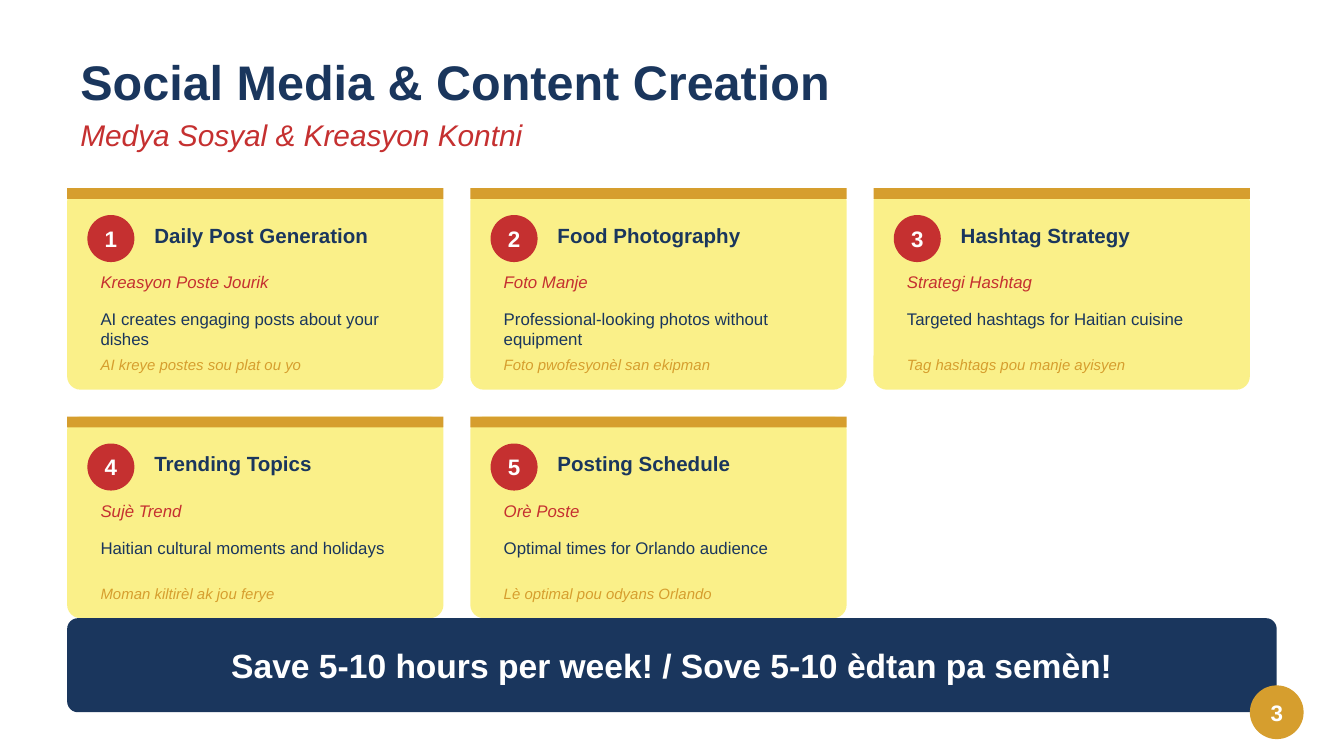
from pptx import Presentation
from pptx.dml.color import RGBColor
from pptx.enum.shapes import MSO_SHAPE as SHAPE
from pptx.enum.text import MSO_ANCHOR as ANCHOR, PP_ALIGN as ALIGN
from pptx.util import Pt

NAVY, RED, GOLD = "1A365D", "C53030", "D69E2E"
YELLOW, WHITE = "FAF089", "FFFFFF"
rgb = RGBColor.from_string

prs = Presentation()
prs.slide_width, prs.slide_height = Pt(720), Pt(405)
s = prs.slides.add_slide(prs.slide_layouts[6])


def add_text(box, text, size, color, bold=False, italic=False, anchor=ANCHOR.MIDDLE):
    sp = s.shapes.add_textbox(*map(Pt, box))
    tf = sp.text_frame
    tf.word_wrap = True
    tf.vertical_anchor = anchor
    p = tf.paragraphs[0]
    p.text = text
    p.font.name, p.font.size = "Arial", Pt(size)
    p.font.bold, p.font.italic = bold, italic
    p.font.color.rgb = rgb(color)


def add_shape(kind, box, fill, text="", size=12, radius=None):
    """Add a filled shape without outline; its text is bold, white and centred."""
    sp = s.shapes.add_shape(kind, *map(Pt, box))
    sp.shadow.inherit = False
    sp.fill.solid()
    sp.fill.fore_color.rgb = rgb(fill)
    sp.line.fill.background()
    if radius is not None:
        sp.adjustments[0] = radius / min(box[2:])
    if text:
        tf = sp.text_frame
        tf.margin_left = tf.margin_right = tf.margin_top = tf.margin_bottom = 0
        tf.vertical_anchor = ANCHOR.MIDDLE
        p = tf.paragraphs[0]
        p.text = text
        p.alignment = ALIGN.CENTER
        p.font.name, p.font.size, p.font.bold = "Arial", Pt(size), True
        p.font.color.rgb = rgb(WHITE)


# Headings
add_text((36, 21.6, 432, 43.2), "Social Media & Content Creation", 26, NAVY, bold=True)
add_text((36, 57.6, 432, 28.8), "Medya Sosyal & Kreasyon Kontni", 16, RED, italic=True)

# Cards: title, Creole title, description, Creole description
cards = [
    ("Daily Post Generation", "Kreasyon Poste Jourik",
     "AI creates engaging posts about your dishes", "AI kreye postes sou plat ou yo"),
    ("Food Photography", "Foto Manje",
     "Professional-looking photos without equipment", "Foto pwofesyonèl san ekipman"),
    ("Hashtag Strategy", "Strategi Hashtag",
     "Targeted hashtags for Haitian cuisine", "Tag hashtags pou manje ayisyen"),
    ("Trending Topics", "Sujè Trend",
     "Haitian cultural moments and holidays", "Moman kiltirèl ak jou ferye"),
    ("Posting Schedule", "Orè Poste",
     "Optimal times for Orlando audience", "Lè optimal pou odyans Orlando"),
]
CARD_W, CARD_H, GAP = 201.6, 108, 14.4

for i, (title, title_ht, desc, desc_ht) in enumerate(cards):
    row, col = divmod(i, 3)
    x = 36 + col * (CARD_W + GAP)
    y = 100.8 + row * (CARD_H + GAP)
    left = x + 10.8
    add_shape(SHAPE.ROUNDED_RECTANGLE, (x, y, CARD_W, CARD_H), YELLOW, radius=7.2)
    add_shape(SHAPE.RECTANGLE, (x, y, CARD_W, 5.76), GOLD)
    add_shape(SHAPE.OVAL, (left, y + 14.4, 25.2, 25.2), RED, str(i + 1))
    add_text((x + 39.6, y + 10.8, 151.2, 28.8), title, 11, NAVY, bold=True)
    add_text((left, y + 39.6, 180, 21.6), title_ht, 9, RED, italic=True)
    add_text((left, y + 61.2, 180, 36), desc, 9, NAVY, anchor=ANCHOR.TOP)
    add_text((left, y + 86.4, 180, 18), desc_ht, 8, GOLD, italic=True, anchor=ANCHOR.TOP)

# Banner and page number
add_shape(SHAPE.ROUNDED_RECTANGLE, (36, 331.2, 648, 50.4), NAVY,
          "Save 5-10 hours per week! / Sove 5-10 èdtan pa semèn!", 18, radius=5.76)
add_shape(SHAPE.OVAL, (669.6, 367.2, 28.8, 28.8), GOLD, "3")

prs.save("out.pptx")
